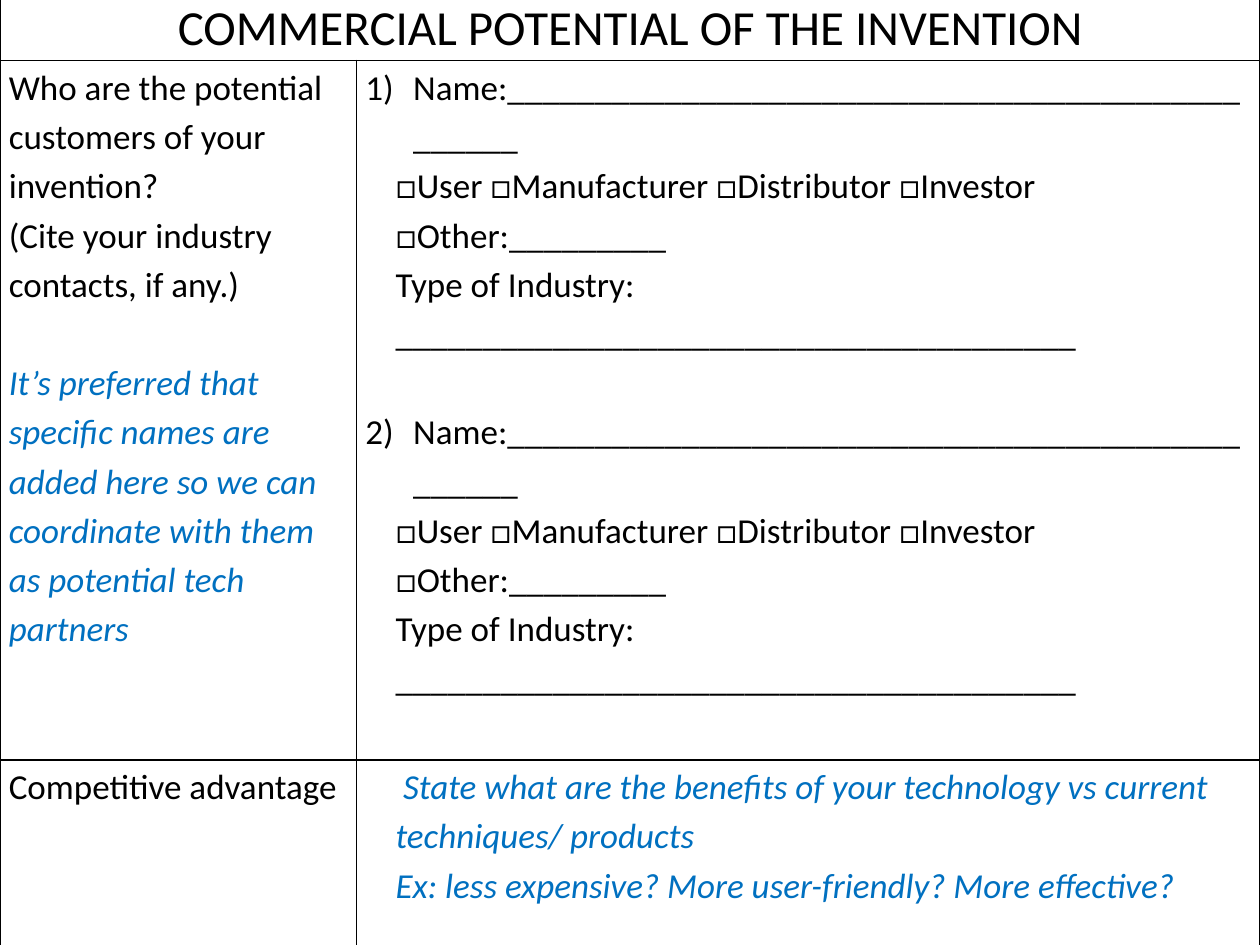
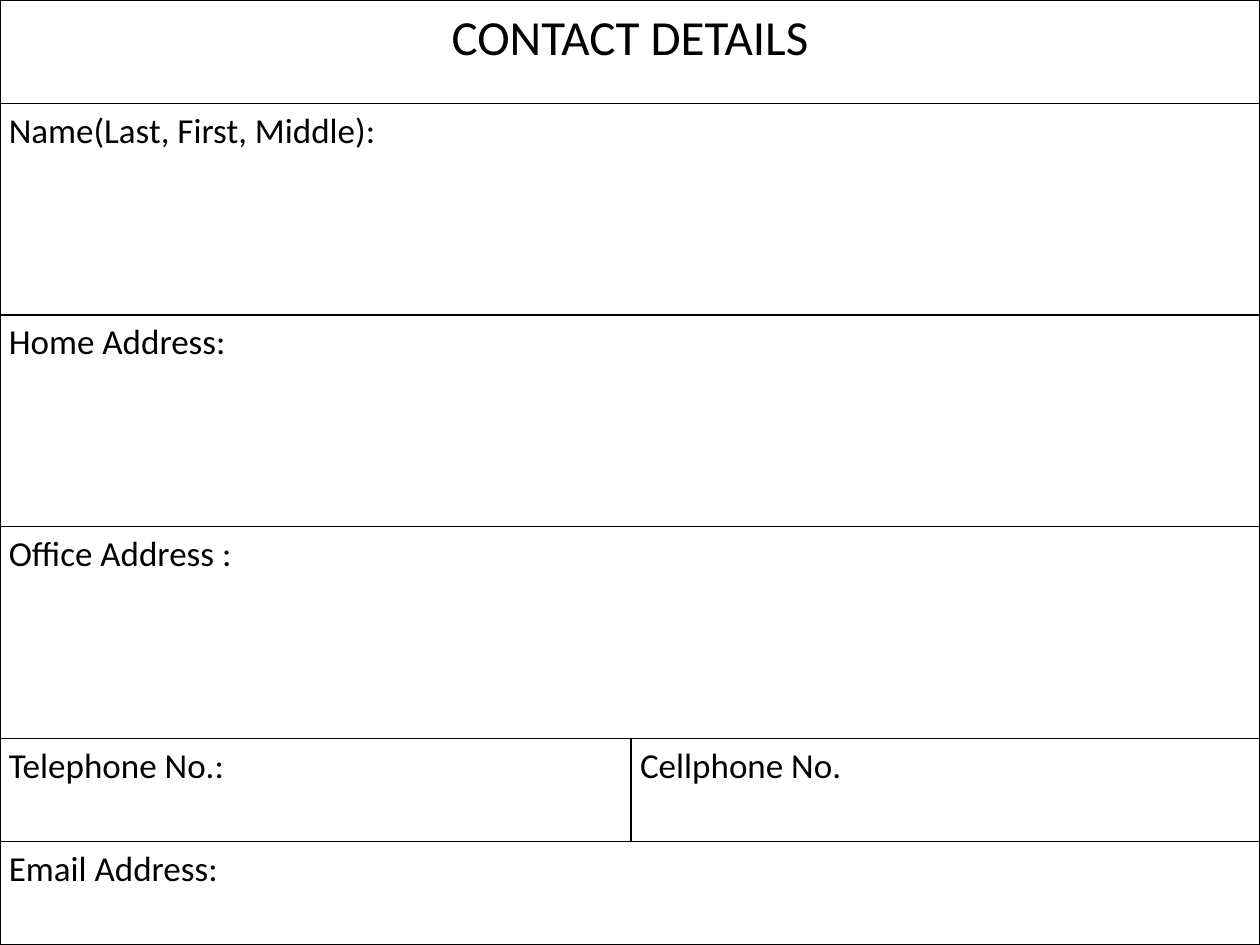
from dataclasses import dataclass

from lxml import etree
from pptx import Presentation
from pptx.dml.color import RGBColor
from pptx.enum.text import PP_ALIGN
from pptx.oxml.ns import qn
from pptx.util import Inches, Pt

CENTER, JUSTIFY = PP_ALIGN.CENTER, PP_ALIGN.JUSTIFY
BLANK_LAYOUT = 6
SLIDE_W, SLIDE_H = 10, 7.5


@dataclass(frozen=True)
class Theme:
    font: str = "Calibri"
    ink: str = "000000"
    hint: str = "0070C0"
    title_size: int = 28
    body_size: int = 20
    line_spacing: float = 1.15
    blank_line: int = 28
    inset: float = 0.07
    border: int = 1


THEME = Theme()

# A cell is a list of (text, format) paragraphs; a one-cell row spans the table.
TITLE = {"size": THEME.title_size, "align": CENTER}
HINT = {"color": THEME.hint, "italic": True}
INDENTED = {"left": 0.24}


def customer(number):
    gap = THEME.blank_line if number > 1 else 0
    return [
        ("Name:" + "_" * 48,
         {"left": 0.38, "first": -0.38, "number": number, "before": gap}),
        ("□User □Manufacturer □Distributor □Investor □Other:" + "_" * 9, INDENTED),
        ("Type of Industry: " + "_" * 39, INDENTED),
    ]


POTENTIAL = {
    "top": -0.08,
    "cols": [0.283, 0.717],
    "rows": [0.56, 5.55, 1.48],
    "cells": [
        [[("COMMERCIAL POTENTIAL OF THE INVENTION", TITLE)]],
        [
            [
                ("Who are the potential customers of your invention?", {}),
                ("(Cite your industry contacts, if any.)", {}),
                ("It’s preferred that specific names are added here so we can "
                 "coordinate with them as potential tech partners",
                 {**HINT, "before": THEME.blank_line}),
            ],
            customer(1) + customer(2),
        ],
        [
            [("Competitive advantage", {})],
            [
                ("State what are the benefits of your technology vs current "
                 "techniques/ products", {**HINT, **INDENTED, "first": 0.06}),
                ("Ex: less expensive? More user-friendly? More effective?",
                 {**HINT, **INDENTED}),
            ],
        ],
    ],
}

SHORT_ROW, TALL_ROW = 0.82, 1.68
CONTACT = {
    "top": 0,
    "cols": [0.501, 0.499],
    "rows": [SHORT_ROW] + [TALL_ROW] * 3 + [SHORT_ROW] * 2,
    "cells": [
        [[("CONTACT DETAILS", TITLE)]],
        [[("Name(Last, First, Middle):", {})]],
        [[("Home Address:", {"align": JUSTIFY})]],
        [[("Office Address :", {})]],
        [[("Telephone No.:", {})], [("Cellphone No.", {})]],
        [[("Email Address:", {})]],
    ],
}


def write(p, text, *, size=THEME.body_size, color=THEME.ink, italic=False,
          align=None, left=0, first=0, before=0, number=None):
    p.alignment = align
    p.line_spacing = THEME.line_spacing
    p.space_before = Pt(before)
    pPr = p._p.get_or_add_pPr()
    pPr.set("marL", str(Inches(left)))
    pPr.set("indent", str(Inches(first)))
    if number:
        etree.SubElement(pPr, qn("a:buFont"), typeface=THEME.font)
        etree.SubElement(pPr, qn("a:buAutoNum"), type="arabicParenR",
                         startAt=str(number))
    r = p.add_run()
    r.text = text
    r.font.name, r.font.size, r.font.italic = THEME.font, Pt(size), italic
    r.font.color.rgb = RGBColor.from_string(color)


def style_cell(cell):
    cell.margin_left = cell.margin_right = Inches(THEME.inset)
    cell.margin_top = cell.margin_bottom = 0
    cell.fill.background()
    tcPr = cell._tc.get_or_add_tcPr()
    for i, side in enumerate(("lnL", "lnR", "lnT", "lnB")):
        ln = etree.Element(qn(f"a:{side}"), w=str(Pt(THEME.border)))
        fill = etree.SubElement(ln, qn("a:solidFill"))
        etree.SubElement(fill, qn("a:srgbClr"), val=THEME.ink)
        tcPr.insert(i, ln)


def fill_cell(cell, paragraphs):
    tf = cell.text_frame
    for i, (text, fmt) in enumerate(paragraphs):
        p = tf.add_paragraph() if i else tf.paragraphs[0]
        write(p, text, **fmt)


def add_form(prs, form):
    """Add a slide filled by one bordered table."""
    s = prs.slides.add_slide(prs.slide_layouts[BLANK_LAYOUT])
    rows, cols = form["rows"], form["cols"]
    table = s.shapes.add_table(len(rows), len(cols), 0, Inches(form["top"]),
                               prs.slide_width, Inches(sum(rows))).table
    table.first_row = table.horz_banding = False
    for column, share in zip(table.columns, cols):
        column.width = Inches(SLIDE_W * share)
    for row, height in zip(table.rows, rows):
        row.height = Inches(height)
    for y, contents in enumerate(form["cells"]):
        if len(contents) == 1:
            table.cell(y, 0).merge(table.cell(y, len(cols) - 1))
        for x, paragraphs in enumerate(contents):
            fill_cell(table.cell(y, x), paragraphs)
    for cell in table.iter_cells():
        style_cell(cell)


def main():
    prs = Presentation()
    prs.slide_width, prs.slide_height = Inches(SLIDE_W), Inches(SLIDE_H)
    for form in (POTENTIAL, CONTACT):
        add_form(prs, form)
    prs.save("out.pptx")


if __name__ == "__main__":
    main()
